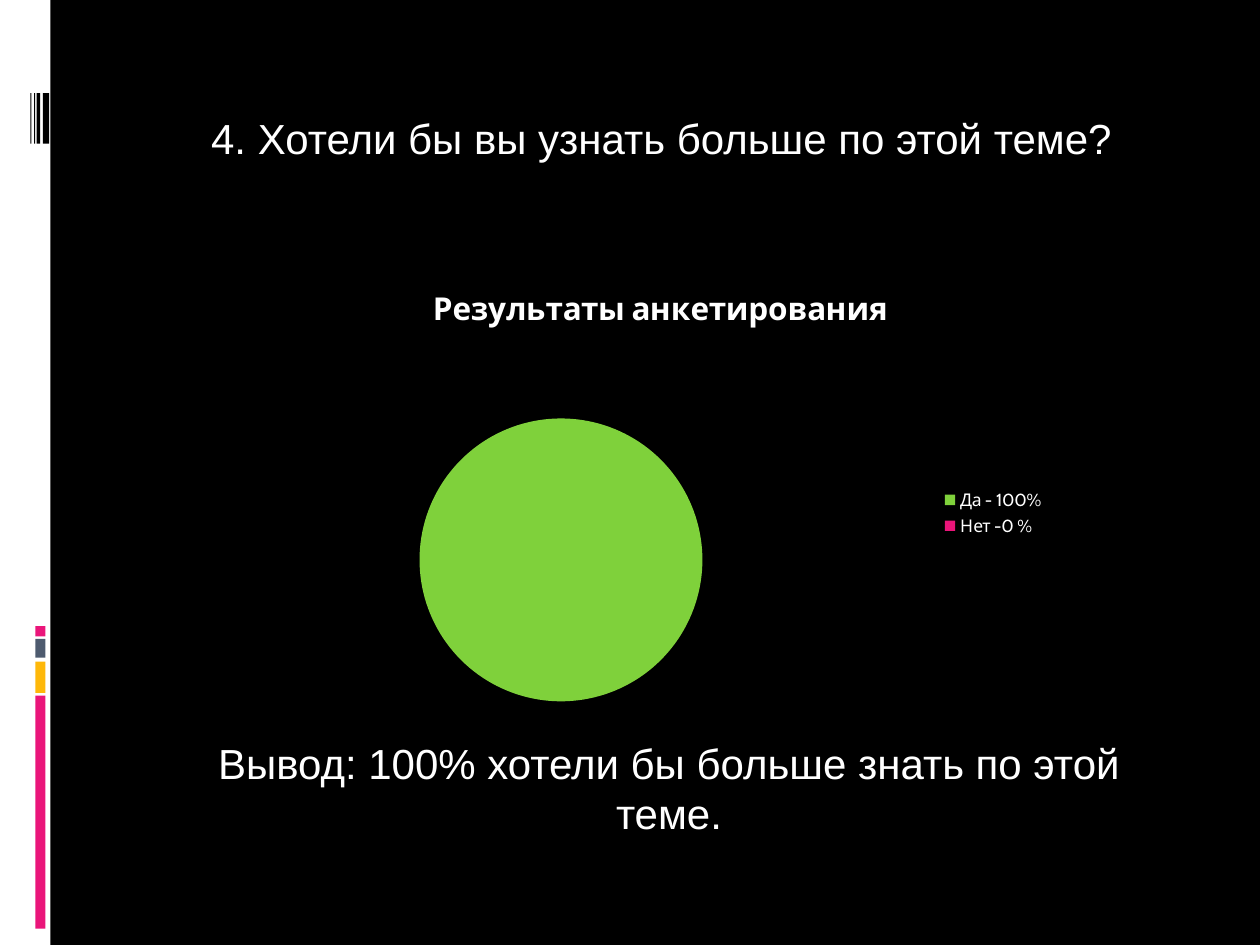
from dataclasses import dataclass

from pptx import Presentation, util as u
from pptx.chart import data as chart_data
from pptx.dml import color
from pptx.enum import chart as chart_enum, text
from pptx.enum import shapes
from pptx.oxml import ns, parse_xml


@dataclass(frozen=True)
class Theme:
    """Colours, font names and type sizes of the slide."""
    black: str = "000000"
    white: str = "FFFFFF"
    pink: str = "EA157A"
    amber: str = "FEB80A"
    slate: str = "4E5B6F"
    green: str = "7FD13B"
    body_font: str = "Arial"
    chart_font: str = "Cabin"
    body_size: int = 24
    heading_size: int = 18
    legend_size: int = 10


THEME = Theme()


def apply(target, values):
    """Set every attribute named in values on target."""
    for name, value in values.items():
        setattr(target, name, value)


def paint(fill, rgb):
    """Give a fill one solid colour."""
    fill.solid()
    fill.fore_color.rgb = color.RGBColor.from_string(rgb)


def style_font(font, name, size, bold=False):
    """Format a font in white."""
    apply(font, {"name": name, "size": u.Pt(size), "bold": bold})
    font.color.rgb = color.RGBColor.from_string(THEME.white)


def add_bar(slide, left, top, width, height, rgb):
    """Add a plain rectangle without outline or shadow."""
    bar = slide.shapes.add_shape(
        shapes.MSO_SHAPE.RECTANGLE, *map(u.Inches, (left, top, width, height)))
    paint(bar.fill, rgb)
    bar.line.fill.background()
    bar.shadow.inherit = False


def add_rail(slide):
    """Add the left rail with its coloured blocks and barcode stripes."""
    add_bar(slide, 0, 0, 0.4, 7.5, THEME.white)
    blocks = ((5.52, 1.85, THEME.pink), (5.25, 0.25, THEME.amber),
              (5.07, 0.15, THEME.slate), (4.97, 0.08, THEME.pink))
    for top, height, rgb in blocks:
        add_bar(slide, 0.28, top, 0.08, height, rgb)
    for left, width in ((0.34, 0.05), (0.29, 0.03), (0.27, 0.01), (0.24, 0.01)):
        add_bar(slide, left, 0.74, width, 0.4, THEME.black)


def fill_statement(box, wording, wrap):
    """Write one centred statement at the top of a text shape."""
    frame = box.text_frame
    frame.text = wording
    apply(frame, {"word_wrap": wrap, "vertical_anchor": text.MSO_ANCHOR.TOP,
                  "auto_size": text.MSO_AUTO_SIZE.SHAPE_TO_FIT_TEXT})
    paragraph = frame.paragraphs[0]
    paragraph.alignment = text.PP_ALIGN.CENTER
    style_font(paragraph.runs[0].font, THEME.body_font, THEME.body_size)


def add_question(slide, wording):
    """Place the question in the title placeholder."""
    question = slide.shapes.title
    apply(question, {"left": u.Inches(1.54), "top": u.Inches(0.84),
                     "width": u.Inches(7.42), "height": u.Inches(0.81)})
    fill_statement(question, wording, False)


def add_conclusion(slide, wording):
    """Add the conclusion below the chart."""
    conclusion = slide.shapes.add_textbox(
        *map(u.Inches, (1.61, 5.8, 7.4, 1.21)))
    fill_statement(conclusion, wording, True)


def place_plot(chart, x, y, w, h):
    """Fix the inner plot area as fractions of the chart."""
    plot_area = chart.element.find(".//" + ns.qn("c:plotArea"))
    for layout in plot_area.findall(ns.qn("c:layout")):
        plot_area.remove(layout)
    sizes = "".join(f'<c:{tag} val="{value}"/>'
                    for tag, value in zip("xywh", (x, y, w, h)))
    plot_area.insert(0, parse_xml(
        f'<c:layout {ns.nsdecls("c")}><c:manualLayout>'
        '<c:layoutTarget val="inner"/><c:xMode val="edge"/>'
        f'<c:yMode val="edge"/>{sizes}</c:manualLayout></c:layout>'))


def add_survey_pie(slide, heading, answers):
    """Add the pie of answers with its heading and legend."""
    survey = chart_data.CategoryChartData()
    survey.categories = list(answers)
    survey.add_series("Series 1", [share for share, rgb in answers.values()])
    chart = slide.shapes.add_chart(
        chart_enum.XL_CHART_TYPE.PIE,
        *map(u.Inches, (2.09, 2.1, 6.3, 3.94)), survey).chart
    style_font(chart.font, THEME.chart_font, THEME.legend_size)

    chart.has_title = True
    title_frame = chart.chart_title.text_frame
    title_frame.text = heading
    style_font(title_frame.paragraphs[0].runs[0].font,
               THEME.chart_font, THEME.heading_size, True)
    chart.chart_title.include_in_layout = False

    chart.has_legend = True
    apply(chart.legend, {"position": chart_enum.XL_LEGEND_POSITION.RIGHT,
                         "include_in_layout": False})
    pie = chart.plots[0]
    pie.vary_by_categories = True
    for index, (share, rgb) in enumerate(answers.values()):
        slice_format = pie.series[0].points[index].format
        paint(slice_format.fill, rgb)
        slice_format.line.fill.background()
    place_plot(chart, 0.03, 0.31, 0.69, 0.57)


def main():
    """Build the survey slide and save it."""
    deck = Presentation()
    apply(deck, {"slide_width": u.Inches(10), "slide_height": u.Inches(7.5)})
    slide = deck.slides.add_slide(deck.slide_layouts[5])
    paint(slide.background.fill, THEME.black)
    add_rail(slide)
    add_survey_pie(slide, "Результаты анкетирования",
                   {"Да - 100%": (100, THEME.green),
                    "Нет -0 %": (0, THEME.pink)})
    add_question(slide, "4. Хотели бы вы узнать больше по этой теме?")
    add_conclusion(slide, "Вывод: 100% хотели бы больше знать по этой теме.")
    deck.save("out.pptx")


if __name__ == "__main__":
    main()
